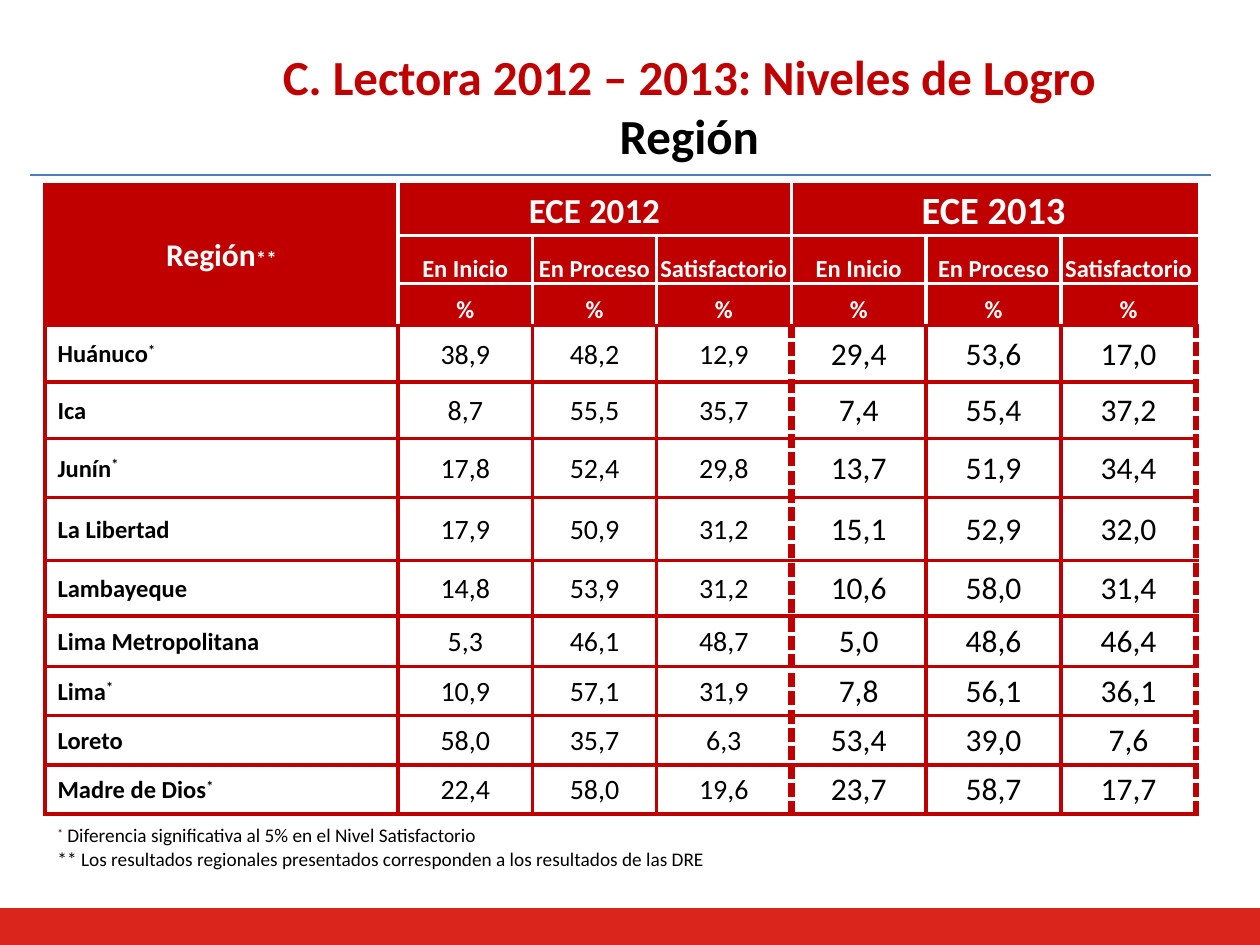
import pptx
import pptx.util
import pptx.dml.color
import pptx.enum.shapes
import pptx.enum.text
import pptx.oxml
import pptx.oxml.ns
from lxml import etree

Cm, Pt = pptx.util.Cm, pptx.util.Pt
ANCHOR = pptx.enum.text.MSO_ANCHOR
CENTER = pptx.enum.text.PP_ALIGN.CENTER
FONT = "Calibri"
COLORS = {"red": "C00000", "bar": "DA251D", "rule": "4B7EBC", "white": "FFFFFF", "black": "000000"}

COL_WIDTHS = [7.11, 2.72, 2.49] + [2.72] * 4
ROW_HEIGHTS = [1.02, 0.97, 0.84, 1.14, 1.14, 1.19, 1.27, 1.12, 1.02, 0.99, 0.99, 0.99]
HEADER_ROWS = 3
LEVELS = ["En Inicio", "En Proceso", "Satisfactorio"]
REGIONS = [
    ("Huánuco", "*", "38,9 48,2 12,9 29,4 53,6 17,0"),
    ("Ica", "", "8,7 55,5 35,7 7,4 55,4 37,2"),
    ("Junín", "*", "17,8 52,4 29,8 13,7 51,9 34,4"),
    ("La Libertad", "", "17,9 50,9 31,2 15,1 52,9 32,0"),
    ("Lambayeque", "", "14,8 53,9 31,2 10,6 58,0 31,4"),
    ("Lima Metropolitana", "", "5,3 46,1 48,7 5,0 48,6 46,4"),
    ("Lima", "*", "10,9 57,1 31,9 7,8 56,1 36,1"),
    ("Loreto", "", "58,0 35,7 6,3 53,4 39,0 7,6"),
    ("Madre de Dios", "*", "22,4 58,0 19,6 23,7 58,7 17,7"),
]


def rgb(name):
    return pptx.dml.color.RGBColor.from_string(COLORS[name])


def set_font(p, size, color="black", bold=False):
    p.font.name = FONT
    p.font.size = Pt(size)
    p.font.bold = bold
    p.font.color.rgb = rgb(color)


def add_run(p, text, superscript=False):
    r = p.add_run()
    r.text = text
    if superscript:
        r._r.get_or_add_rPr().set("baseline", "30000")
    return r


def vertical_edge(row, col):
    if row >= HEADER_ROWS:
        return ("red", 4.5, "sysDash") if col in (4, 7) else ("red", 2.25, "solid")
    inner = col in (1, 4) if row == 0 else 0 < col < len(COL_WIDTHS)
    return "white" if inner else "red", 2.25, "solid"


def horizontal_edge(row, col):
    return "white" if row in (1, 2) and col > 0 else "red", 2.25, "solid"


def set_border(cell, tag, color, width, dash):
    tcPr = cell._tc.get_or_add_tcPr()
    ln = etree.SubElement(tcPr, pptx.oxml.ns.qn(f"a:{tag}"), w=str(Pt(width)))
    fill = etree.SubElement(ln, pptx.oxml.ns.qn("a:solidFill"))
    etree.SubElement(fill, pptx.oxml.ns.qn("a:srgbClr"), val=COLORS[color])
    etree.SubElement(ln, pptx.oxml.ns.qn("a:prstDash"), val=dash)


def style_cell(cell, row, col):
    set_border(cell, "lnL", *vertical_edge(row, col))
    set_border(cell, "lnR", *vertical_edge(row, col + 1))
    set_border(cell, "lnT", *horizontal_edge(row, col))
    set_border(cell, "lnB", *horizontal_edge(row + 1, col))
    if row < HEADER_ROWS:
        cell.fill.solid()
        cell.fill.fore_color.rgb = rgb("red")
    else:
        cell.fill.background()
    label = row >= HEADER_ROWS and col == 0
    cell.margin_left = Cm(0.25 if label else 0.03)
    cell.margin_right = cell.margin_top = Cm(0.03)
    cell.margin_bottom = 0
    cell.vertical_anchor = ANCHOR.BOTTOM if row in (1, 2) and col > 0 else ANCHOR.MIDDLE


def write_cell(cell, text, size, color="black", bold=False, align=CENTER):
    p = cell.text_frame.paragraphs[0]
    p.alignment = align
    set_font(p, size, color, bold)
    add_run(p, text)
    return p


def fill_header(table):
    p = write_cell(table.cell(0, 0), "Región", 18, "white", True)
    add_run(p, "**").font.size = Pt(12)
    write_cell(table.cell(0, 1), "ECE 2012", 20, "white", True)
    write_cell(table.cell(0, 4), "ECE 2013", 22, "white", True)
    for col, level in enumerate(LEVELS * 2, 1):
        write_cell(table.cell(1, col), level, 14, "white", True)
        write_cell(table.cell(2, col), "%", 14, "white", True)
    table.cell(0, 0).merge(table.cell(2, 0))
    table.cell(0, 1).merge(table.cell(0, 3))
    table.cell(0, 4).merge(table.cell(0, 6))


def fill_body(table):
    for row, (region, mark, values) in enumerate(REGIONS, HEADER_ROWS):
        p = write_cell(table.cell(row, 0), region, 14, bold=True, align=None)
        if mark:
            add_run(p, mark, superscript=True)
        for col, value in enumerate(values.split(), 1):
            write_cell(table.cell(row, col), value, 16 if col < 4 else 18)


def add_results_table(s):
    table = s.shapes.add_table(len(ROW_HEIGHTS), len(COL_WIDTHS), Cm(0.91), Cm(3.73),
                               Cm(sum(COL_WIDTHS)), Cm(sum(ROW_HEIGHTS))).table
    table.first_row = table.horz_banding = False
    for col, width in enumerate(COL_WIDTHS):
        table.columns[col].width = Cm(width)
    for row, height in enumerate(ROW_HEIGHTS):
        table.rows[row].height = Cm(height)
        for col in range(len(COL_WIDTHS)):
            style_cell(table.cell(row, col), row, col)
    fill_header(table)
    fill_body(table)


def add_text_box(s, left, top, width, height, anchor):
    tf = s.shapes.add_textbox(Cm(left), Cm(top), Cm(width), Cm(height)).text_frame
    tf.word_wrap = True
    tf.vertical_anchor = anchor
    return tf


def add_title(s):
    tf = add_text_box(s, 2.49, 0.53, 22.81, 3.18, ANCHOR.MIDDLE)
    lines = [("C. Lectora 2012 – 2013: Niveles de Logro", "red"), ("Región", "black")]
    for i, (text, color) in enumerate(lines):
        p = tf.add_paragraph() if i else tf.paragraphs[0]
        p.alignment = CENTER
        set_font(p, 28, color, True)
        add_run(p, text)


def add_footnotes(s):
    tf = add_text_box(s, 0.91, 16.48, 24, 1.24, ANCHOR.TOP)
    notes = [
        [("*", True), (" Diferencia significativa al 5% en el Nivel Satisfactorio", False)],
        [("** Los resultados regionales presentados corresponden a los resultados de las DRE", False)],
    ]
    for i, runs in enumerate(notes):
        p = tf.add_paragraph() if i else tf.paragraphs[0]
        pPr = p._p.get_or_add_pPr()
        pPr.set("marL", str(Cm(0.25)))
        pPr.set("indent", str(-Cm(0.25)))
        set_font(p, 11)
        for text, superscript in runs:
            add_run(p, text, superscript)


def add_bar(s):
    sp = s.shapes.add_shape(pptx.enum.shapes.MSO_SHAPE.RECTANGLE, 0, Cm(18.31), Cm(25.4), Cm(0.74))
    sp.shadow.inherit = False
    sp.fill.solid()
    sp.fill.fore_color.rgb = rgb("bar")
    sp.line.fill.background()


def add_rule(s):
    line = s.shapes.add_connector(pptx.enum.shapes.MSO_CONNECTOR.STRAIGHT,
                                  Cm(0.61), Cm(3.53), Cm(24.41), Cm(3.53))
    line.line.color.rgb = rgb("rule")
    line.line.width = Pt(0.75)
    etree.SubElement(line._element.spPr, pptx.oxml.ns.qn("a:effectLst"))


def main():
    prs = pptx.Presentation()
    prs.slide_width, prs.slide_height = Cm(25.4), Cm(19.05)
    s = prs.slides.add_slide(prs.slide_layouts[6])
    add_bar(s)
    add_results_table(s)
    add_title(s)
    add_rule(s)
    add_footnotes(s)
    prs.save("out.pptx")


if __name__ == "__main__":
    main()
